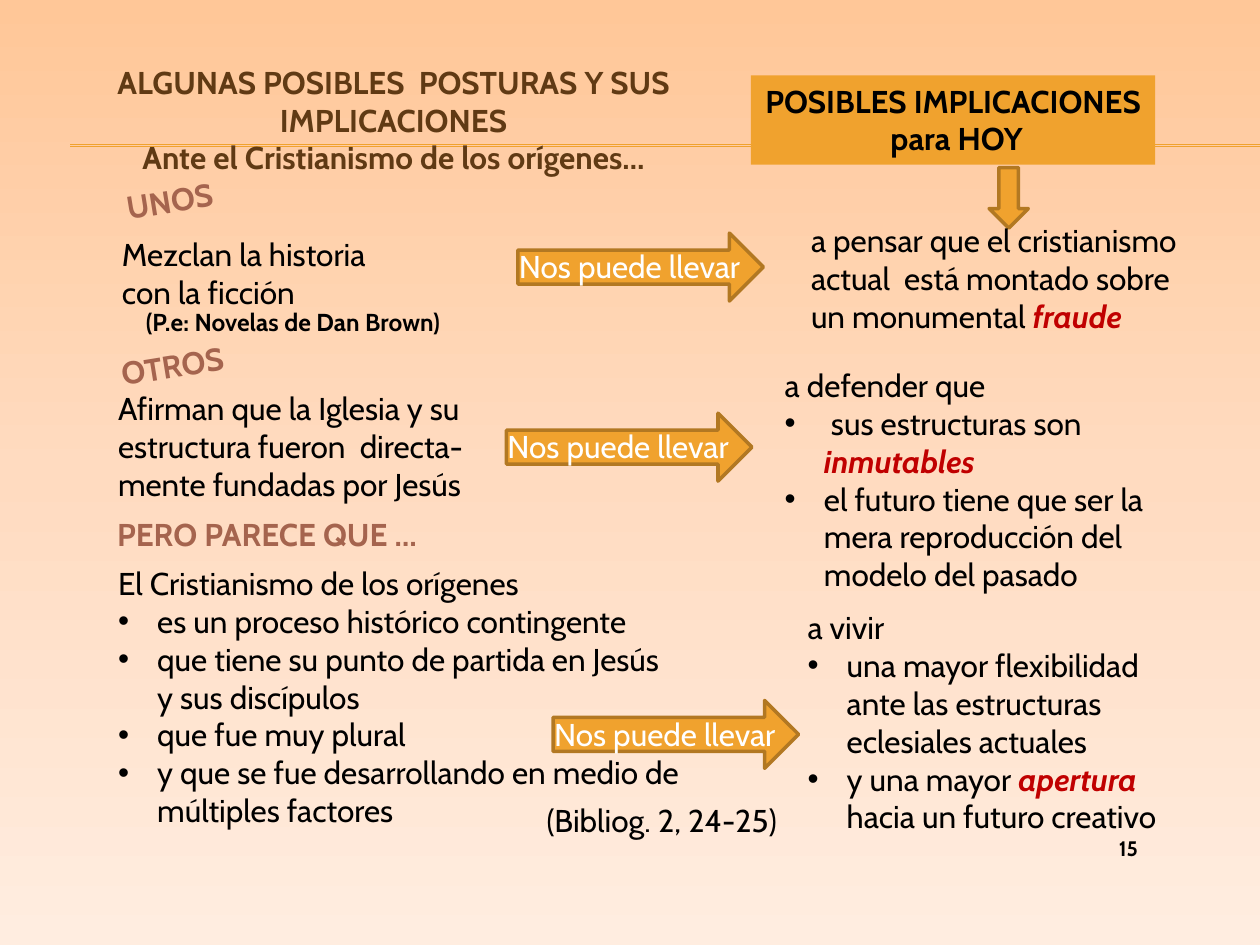
"""Build the slide on views of early Christianity and what they imply today."""
from copy import deepcopy
from lxml.etree import SubElement
from pptx import Presentation
from pptx.dml.color import RGBColor
from pptx.enum.shapes import MSO_CONNECTOR, MSO_SHAPE
from pptx.enum.text import MSO_ANCHOR, PP_ALIGN
from pptx.oxml.ns import qn
from pptx.util import Cm, Pt

BLACK = RGBColor(0x00, 0x00, 0x00)
WHITE = RGBColor(0xFF, 0xFF, 0xFF)
BROWN = RGBColor(0x60, 0x3A, 0x14)
CLAY = RGBColor(0xA5, 0x64, 0x4E)
RED = RGBColor(0xC0, 0x00, 0x00)
GOLD = RGBColor(0xF0, 0xA2, 0x2E)
DARK = RGBColor(0xB2, 0x78, 0x22)
TOP = RGBColor(0xFF, 0xC7, 0x98)
MID = RGBColor(0xFF, 0xDB, 0xC0)
LOW = RGBColor(0xFF, 0xED, 0xE0)
LEFT, CENTER, RIGHT = PP_ALIGN.LEFT, PP_ALIGN.CENTER, PP_ALIGN.RIGHT

deck = Presentation()
deck.slide_width, deck.slide_height = Cm(25.4), Cm(19.05)
slide = deck.slides.add_slide(deck.slide_layouts[6])
shapes = slide.shapes

fill = slide.background.fill
fill.gradient()
fill.gradient_angle = 270
first = slide.element.find(".//" + qn("a:gs"))
first.addnext(deepcopy(first))
for stop, tint, place in zip(fill.gradient_stops, (TOP, MID, LOW), (0, 0.5, 1)):
    stop.color.rgb = tint
    stop.position = place


def write(shape, lines, color=BLACK, bold=False, size=18, align=LEFT):
    """Fill a shape with lines: '•' starts a bullet, '|' wraps red words."""
    frame = shape.text_frame
    frame.word_wrap = True
    for i, line in enumerate(lines):
        para = frame.add_paragraph() if i else frame.paragraphs[0]
        para.alignment = align
        if line.startswith("•"):
            props = para._p.get_or_add_pPr()
            props.set("marL", str(Cm(0.79)))
            props.set("indent", str(-Cm(0.79)))
            SubElement(props, qn("a:buFont")).set("typeface", "Arial")
            SubElement(props, qn("a:buChar")).set("char", "•")
            line = line[1:]
        for j, part in enumerate(line.split("|")):
            if not part:
                continue
            run = para.add_run()
            run.text = part
            font = run.font
            font.name, font.size = "Cabin", Pt(size)
            strong = j % 2 == 1
            font.bold, font.italic = bold or strong, strong
            font.color.rgb = RED if strong else color


def block(kind, x, y, w, h, edge=True):
    """Add a gold preset shape, with a dark edge if asked."""
    shape = shapes.add_shape(kind, Cm(x), Cm(y), Cm(w), Cm(h))
    shape.shadow.inherit = False
    shape.fill.solid()
    shape.fill.fore_color.rgb = GOLD
    if edge:
        shape.line.color.rgb = DARK
        shape.line.width = Pt(2)
    else:
        shape.line.fill.background()
    return shape


for y in (2.92, 2.95):
    rule = shapes.add_connector(MSO_CONNECTOR.STRAIGHT, Cm(1.42), Cm(y), Cm(25.4), Cm(y))
    rule.line.color.rgb = GOLD
    rule.line.width = Pt(0.75)
    SubElement(rule._element.spPr, qn("a:effectLst"))

block(MSO_SHAPE.DOWN_ARROW, 19.94, 3.38, 0.79, 1.22)

texts = [
    (1.37, 1.14, 13.13, 2.57, BROWN, True, 18, CENTER,
     ["ALGUNAS POSIBLES  POSTURAS Y SUS IMPLICACIONES",
      "Ante el Cristianismo de los orígenes…"]),
    (2.21, 4.62, 7.32, 1.8, BLACK, False, 18, LEFT,
     ["Mezclan la historia", "con la ficción"]),
    (2.13, 7.72, 9.19, 2.57, BLACK, False, 18, LEFT,
     ["Afirman que la Iglesia y su estructura fueron  directa-",
      "mente fundadas por Jesús"]),
    (2.13, 11.25, 11.81, 5.64, BLACK, False, 18, LEFT,
     ["El Cristianismo de los orígenes",
      "•es un proceso histórico contingente",
      "•que tiene su punto de partida en Jesús y sus discípulos",
      "•que fue muy plural",
      "•y que se fue desarrollando en medio de múltiples factores"]),
    (16.1, 4.34, 8.2, 2.57, BLACK, False, 18, LEFT,
     ["a pensar que el cristianismo actual  está montado sobre un monumental |fraude|"]),
    (15.57, 7.26, 8.71, 4.88, BLACK, False, 18, LEFT,
     ["a defender que",
      "• sus estructuras son |inmutables|",
      "•el futuro tiene que ser la mera reproducción del modelo del pasado"]),
    (16.03, 12.14, 7.82, 4.88, BLACK, False, 18, LEFT,
     ["a vivir",
      "•una mayor flexibilidad ante las estructuras eclesiales actuales",
      "•y una mayor |apertura| hacia un futuro creativo"]),
    (2.69, 6.07, 6.83, 0.86, BLACK, True, 14, LEFT, ["(P.e: Novelas de Dan Brown)"]),
    (10.77, 16.03, 5.69, 1.02, BLACK, False, 18, LEFT, ["(Bibliog. 2, 24-25)"]),
    (2.11, 10.26, 9.09, 1.02, CLAY, True, 18, LEFT, ["PERO PARECE QUE …"]),
    (21.08, 16.71, 2.11, 0.69, BLACK, True, 12, RIGHT, ["15"]),
]
for x, y, w, h, color, bold, size, align, lines in texts:
    box = shapes.add_textbox(Cm(x), Cm(y), Cm(w), Cm(h))
    write(box, lines, color, bold, size, align)

for word, x, y, w in (("UNOS", 2.29, 3.51, 2.59), ("OTROS", 2.18, 6.78, 3.56)):
    box = shapes.add_textbox(Cm(x), Cm(y), Cm(w), Cm(1.02))
    box.rotation = 350.8
    write(box, [word], CLAY, True)

head = block(MSO_SHAPE.RECTANGLE, 15.14, 1.52, 8.15, 1.8, edge=False)
head.text_frame.vertical_anchor = MSO_ANCHOR.TOP
write(head, ["POSIBLES IMPLICACIONES  para HOY"], bold=True, align=CENTER)

for x, y in ((10.44, 4.7), (10.21, 8.33), (11.15, 14.12)):
    block(MSO_SHAPE.RIGHT_ARROW, x, y, 4.95, 1.37)
    label = shapes.add_textbox(Cm(x - 0.23), Cm(y + 0.16), Cm(5.44), Cm(1.02))
    write(label, ["Nos puede llevar"], WHITE)

deck.save("out.pptx")
